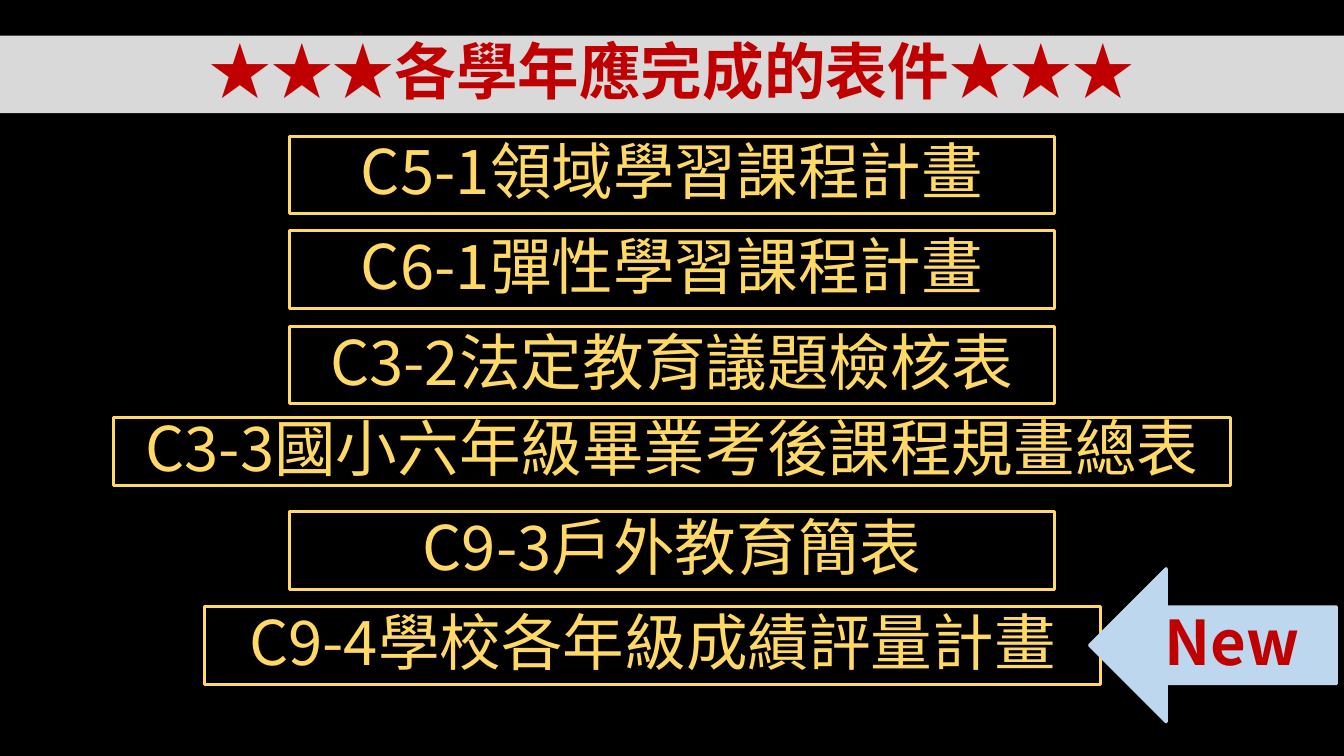
from dataclasses import dataclass

from lxml.etree import SubElement
from pptx import Presentation
from pptx.dml.color import RGBColor
from pptx.enum.shapes import MSO_SHAPE
from pptx.enum.text import MSO_ANCHOR, MSO_AUTO_SIZE, PP_ALIGN
from pptx.oxml.ns import qn
from pptx.util import Cm, Pt


@dataclass(frozen=True)
class Theme:
    background: RGBColor = RGBColor(0x00, 0x00, 0x00)
    banner: RGBColor = RGBColor(0xD9, 0xD9, 0xD9)
    red: RGBColor = RGBColor(0xC0, 0x00, 0x00)
    gold: RGBColor = RGBColor(0xFF, 0xD9, 0x66)
    arrow: RGBColor = RGBColor(0xBD, 0xD7, 0xEE)
    font: str = "Noto Sans CJK SC"
    star_font: str = "Noto Sans CJK TC"
    size: Pt = Pt(44)
    border: Pt = Pt(2.25)


theme = Theme()


def place(shape, left, top, width, height):
    shape.left, shape.top = Cm(left), Cm(top)
    shape.width, shape.height = Cm(width), Cm(height)


def write(shape, runs, color, bold):
    frame = shape.text_frame
    frame.word_wrap = True
    frame.auto_size = MSO_AUTO_SIZE.NONE
    frame.vertical_anchor = MSO_ANCHOR.MIDDLE
    frame.margin_top = frame.margin_bottom = 0
    paragraph = frame.paragraphs[0]
    paragraph.alignment = PP_ALIGN.CENTER
    paragraph.line_spacing = 0.9
    paragraph.space_before = Pt(0)
    properties = paragraph._p.get_or_add_pPr()
    properties.set("marL", "0")
    properties.set("indent", "0")
    SubElement(properties, qn("a:buNone"))
    for text, font_name in runs:
        run = paragraph.add_run()
        run.text = text
        run.font.name = font_name
        run.font.size = theme.size
        run.font.bold = bold
        run.font.color.rgb = color
        run_properties = run._r.get_or_add_rPr()
        run_properties.set("lang", "zh-TW")
        SubElement(run_properties, qn("a:ea")).set("typeface", font_name)


presentation = Presentation()
presentation.slide_width = Cm(33.87)
presentation.slide_height = Cm(19.05)
slide = presentation.slides.add_slide(presentation.slide_layouts[1])
slide.background.fill.solid()
slide.background.fill.fore_color.rgb = theme.background

title = slide.shapes.title
place(title, 0, 0.9, 33.87, 1.95)
title.fill.solid()
title.fill.fore_color.rgb = theme.banner
stars = ("★★★", theme.star_font)
write(title, [stars, ("各學年應完成的表件", theme.font), stars], theme.red, True)

body_form = "C3-3國小六年級畢業考後課程規畫總表"
forms = [
    ("C5-1領域學習課程計畫", 7.3, 3.43, 19.28, 1.96),
    ("C6-1彈性學習課程計畫", 7.3, 5.82, 19.28, 1.96),
    ("C3-2法定教育議題檢核表", 7.3, 8.22, 19.28, 1.96),
    (body_form, 2.87, 10.52, 28.14, 1.72),
    ("C9-3戶外教育簡表", 7.3, 12.9, 19.28, 1.96),
    ("C9-4學校各年級成績評量計畫", 5.16, 15.29, 22.58, 1.96),
]
for text, *bounds in forms:
    if text == body_form:
        form = slide.placeholders[1]
    else:
        form = slide.shapes.add_shape(MSO_SHAPE.RECTANGLE, 0, 0, 0, 0)
        form.shadow.inherit = False
    place(form, *bounds)
    form.fill.background()
    form.line.color.rgb = theme.gold
    form.line.width = theme.border
    write(form, [(text, theme.font)], theme.gold, False)

new_arrow = slide.shapes.add_shape(MSO_SHAPE.LEFT_ARROW, 0, 0, 0, 0)
place(new_arrow, 27.46, 14.33, 6.22, 3.86)
new_arrow.shadow.inherit = False
new_arrow.fill.solid()
new_arrow.fill.fore_color.rgb = theme.arrow
new_arrow.line.color.rgb = theme.arrow
new_arrow.line.width = theme.border
write(new_arrow, [("New", theme.font)], theme.red, True)

presentation.save("out.pptx")
